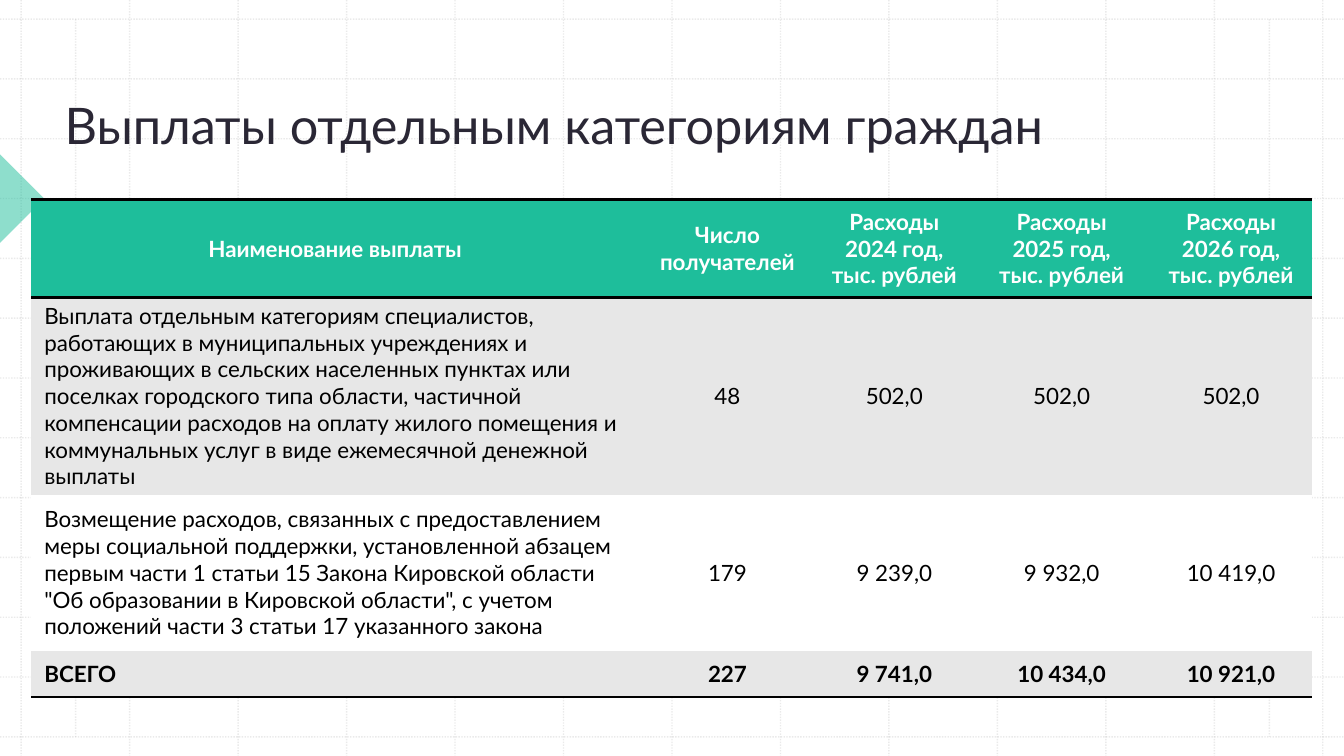
import lxml.etree
import pptx
import pptx.dml.color
import pptx.enum.dml
import pptx.enum.shapes
import pptx.enum.text
import pptx.oxml
import pptx.oxml.ns
import pptx.util

Inches = pptx.util.Inches
Pt = pptx.util.Pt
qn = pptx.oxml.ns.qn
ALIGN = pptx.enum.text.PP_ALIGN
ANCHOR = pptx.enum.text.MSO_ANCHOR

PAGE_WIDTH, PAGE_HEIGHT = 13.33, 7.5
GREEN, GREY, WHITE, BLACK = "1EBE9B", "E7E7E7", "FFFFFF", "000000"
PLAIN_STYLE = "{2D5ABB26-0587-4C30-8999-92F81FD0307C}"

COLUMN_WIDTHS = [6.03, 1.75, 1.56, 1.76, 1.6]
ROW_HEIGHTS = [0.97, 1.91, 1.55, 0.46]
HEADER = ["Наименование выплаты", "Число получателей"] + [
    f"Расходы\n{year} год,\nтыс. рублей" for year in (2024, 2025, 2026)
]
ROWS = [
    HEADER,
    ["Выплата отдельным категориям специалистов, работающих в муниципальных "
     "учреждениях и проживающих в сельских населенных пунктах или поселках "
     "городского типа области, частичной компенсации расходов на оплату жилого "
     "помещения и коммунальных услуг в виде ежемесячной денежной выплаты",
     "48", "502,0", "502,0", "502,0"],
    ["Возмещение расходов, связанных с предоставлением меры социальной "
     "поддержки, установленной абзацем первым части 1 статьи 15 Закона "
     "Кировской области \"Об образовании в Кировской области\", с учетом "
     "положений части 3 статьи 17 указанного закона",
     "179", "9 239,0", "9 932,0", "10 419,0"],
    ["ВСЕГО", "227", "9 741,0", "10 434,0", "10 921,0"],
]
ROW_STYLES = [
    {"fill": GREEN, "color": WHITE, "bold": True, "borders": ("lnT", "lnB")},
    {"fill": GREY, "color": BLACK, "bold": False, "borders": ()},
    {"fill": WHITE, "color": BLACK, "bold": False, "borders": ()},
    {"fill": GREY, "color": BLACK, "bold": True, "borders": ("lnB",)},
]


def rgb(value):
    return pptx.dml.color.RGBColor.from_string(value)


def set_values(target, values):
    for name, value in values.items():
        setattr(target, name, value)


def set_fill(fill, color):
    fill.solid()
    fill.fore_color.rgb = rgb(color)


def set_opacity(element, percent):
    color = element.find(".//" + qn("a:srgbClr"))
    lxml.etree.SubElement(color, qn("a:alpha"), val=str(percent * 1000))


def format_font(font, size, color, bold=False):
    set_values(font, {"name": "Lato", "size": Pt(size), "bold": bold})
    font.color.rgb = rgb(color)


def add_grid_line(page, start, end):
    ends = [Inches(length) for length in (*start, *end)]
    line = page.shapes.add_connector(pptx.enum.shapes.MSO_CONNECTOR.STRAIGHT, *ends)
    line.line.color.rgb = rgb("BCBCBC")
    set_values(line.line, {
        "width": Pt(1),
        "dash_style": pptx.enum.dml.MSO_LINE.ROUND_DOT,
    })
    properties = line.element.spPr
    set_opacity(properties, 30)
    lxml.etree.SubElement(properties, qn("a:effectLst"))


def add_grid(page):
    steps = 12
    left, top = 0.21, 0.19
    column_gap = (PAGE_WIDTH - 2 * left) / steps
    row_gap = (PAGE_HEIGHT - 2 * top) / steps
    for step in range(steps + 1):
        x = left + step * column_gap
        y = top + step * row_gap
        add_grid_line(page, (x, 0), (x, PAGE_HEIGHT))
        add_grid_line(page, (0, y), (PAGE_WIDTH, y))
    for x in (0.75, 12.59):
        add_grid_line(page, (x, top), (x, PAGE_HEIGHT - top))


def add_triangle(page):
    triangle = page.shapes.add_shape(
        pptx.enum.shapes.MSO_SHAPE.RIGHT_TRIANGLE,
        Inches(-0.31), Inches(1.66), Inches(0.62), Inches(0.62))
    triangle.rotation = 225
    triangle.shadow.inherit = False
    set_fill(triangle.fill, GREEN)
    set_opacity(triangle.element.spPr, 50)
    triangle.line.fill.background()


def add_title(page, text):
    title = page.shapes.title
    set_values(title, {
        "left": Inches(0.54), "top": Inches(0.79),
        "width": Inches(12.25), "height": Inches(0.79),
    })
    frame = title.text_frame
    frame.text = text
    set_values(frame, {
        "vertical_anchor": ANCHOR.BOTTOM,
        "word_wrap": True,
        "auto_size": pptx.enum.text.MSO_AUTO_SIZE.NONE,
    })
    para = frame.paragraphs[0]
    para.alignment = ALIGN.LEFT
    format_font(para.runs[0].font, 36, "2A2735")
    title.element.getparent().append(title.element)


def add_borders(cell, sides):
    properties = cell._tc.get_or_add_tcPr()
    for position, side in enumerate(sides):
        border = pptx.oxml.parse_xml(
            f'<a:{side} {pptx.oxml.ns.nsdecls("a")} w="{Pt(2)}"><a:solidFill>'
            f'<a:srgbClr val="{BLACK}"/></a:solidFill></a:{side}>')
        properties.insert(position, border)


def fill_cell(cell, text, style, alignment):
    cell.text = text
    set_values(cell, {
        "vertical_anchor": ANCHOR.MIDDLE,
        "margin_left": Inches(0.13), "margin_right": Inches(0.13),
        "margin_top": Inches(0.05), "margin_bottom": Inches(0.05),
    })
    set_fill(cell.fill, style["fill"])
    add_borders(cell, style["borders"])
    for para in cell.text_frame.paragraphs:
        para.alignment = alignment
        for span in para.runs:
            format_font(span.font, 16, style["color"], style["bold"])


def add_payment_table(page):
    frame = page.shapes.add_table(
        len(ROWS), len(HEADER), Inches(0.31), Inches(1.98),
        Inches(sum(COLUMN_WIDTHS)), Inches(sum(ROW_HEIGHTS)))
    table = frame.table
    frame.element.find(".//" + qn("a:tableStyleId")).text = PLAIN_STYLE
    for column, width in zip(table.columns, COLUMN_WIDTHS):
        column.width = Inches(width)
    for row, height in zip(table.rows, ROW_HEIGHTS):
        row.height = Inches(height)
    for row_index, (texts, style) in enumerate(zip(ROWS, ROW_STYLES)):
        for column_index, text in enumerate(texts):
            is_name = row_index > 0 and column_index == 0
            alignment = ALIGN.LEFT if is_name else ALIGN.CENTER
            fill_cell(table.cell(row_index, column_index), text, style, alignment)


def main():
    deck = pptx.Presentation()
    deck.slide_width = Inches(PAGE_WIDTH)
    deck.slide_height = Inches(PAGE_HEIGHT)
    page = deck.slides.add_slide(deck.slide_layouts[5])
    set_fill(page.background.fill, WHITE)
    add_grid(page)
    add_triangle(page)
    add_title(page, "Выплаты отдельным категориям граждан")
    add_payment_table(page)
    deck.save("out.pptx")


if __name__ == "__main__":
    main()
